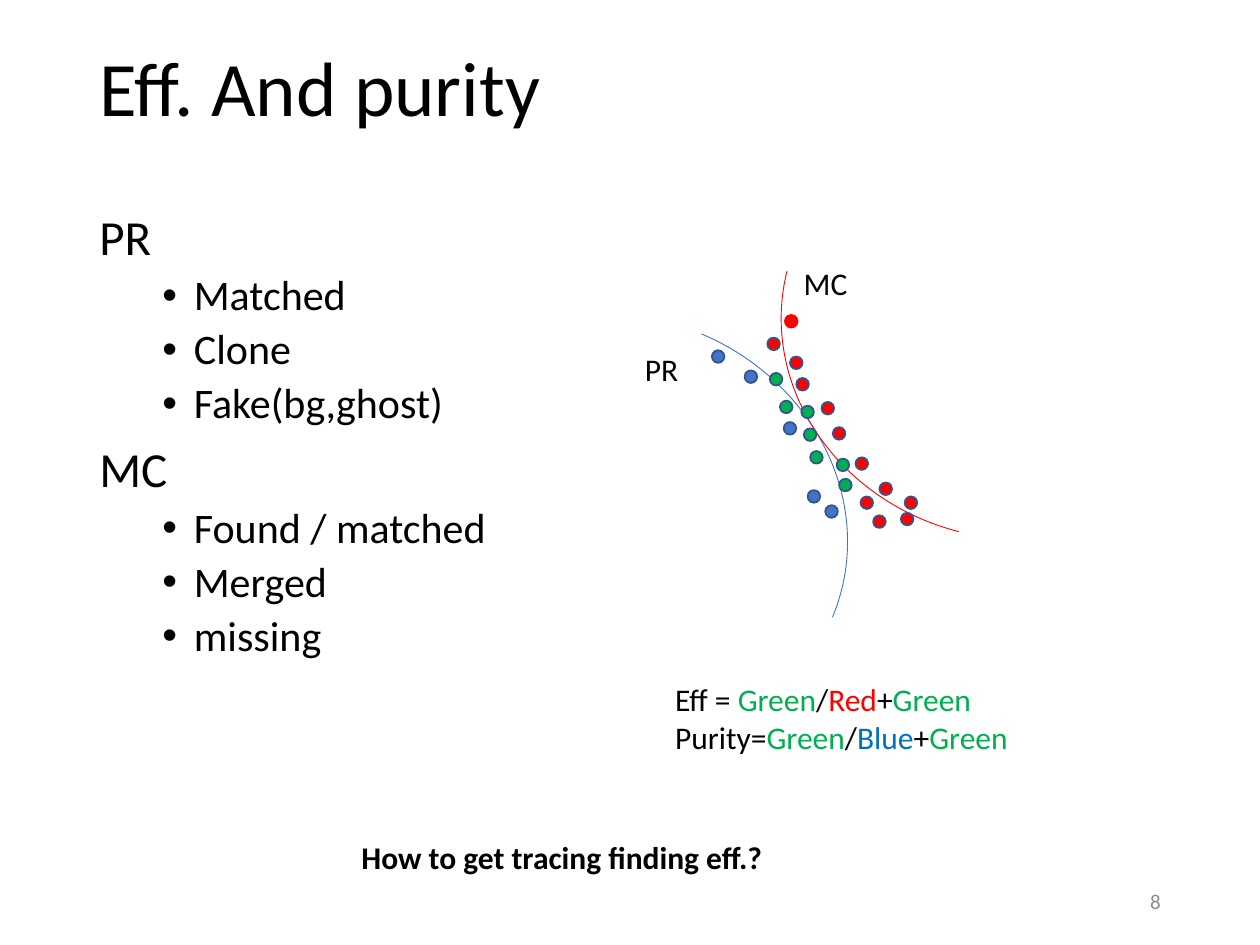
import pptx
import pptx.util
import pptx.dml.color
import pptx.enum.shapes
import pptx.enum.text
import lxml.etree
from pptx.util import Inches

COLORS = {
    "black": "000000", "gray": "8C8C8C", "red": "FF0000", "green": "00B050",
    "blue": "4472C4", "blue text": "0070C0", "outline": "325491",
}
ALIGN = pptx.enum.text.PP_ALIGN
ANCHOR = pptx.enum.text.MSO_ANCHOR
AUTO_SIZE = pptx.enum.text.MSO_AUTO_SIZE
SHAPE = pptx.enum.shapes.MSO_SHAPE


def rgb(name):
    return pptx.dml.color.RGBColor.from_string(COLORS[name])


def write(frame, runs, size=18, color="black", bold=False, align=ALIGN.LEFT,
          spacing=None, before=None, bullet=False, add=False):
    """Write one paragraph; runs is a string or a list of (text, color)."""
    paragraph = frame.add_paragraph() if add else frame.paragraphs[0]
    paragraph.alignment = align
    if spacing:
        paragraph.line_spacing = spacing
    if before is not None:
        paragraph.space_before = pptx.util.Pt(before)
    if bullet:
        paragraph.level = 1
        properties = paragraph._p.get_or_add_pPr()
        properties.set("marL", str(Inches(0.75)))
        properties.set("indent", str(Inches(-0.25)))
        namespace = pptx.oxml.ns.nsuri("a")
        font = lxml.etree.SubElement(properties, f"{{{namespace}}}buFont")
        font.set("typeface", "Arial")
        mark = lxml.etree.SubElement(properties, f"{{{namespace}}}buChar")
        mark.set("char", "•")
    for text, run_color in [(runs, color)] if isinstance(runs, str) else runs:
        run = paragraph.add_run()
        run.text = text
        run.font.name = "Calibri"
        run.font.size = pptx.util.Pt(size)
        run.font.bold = bold
        run.font.color.rgb = rgb(run_color)


deck = pptx.Presentation()
deck.slide_width, deck.slide_height = Inches(10), Inches(7.5)
slide = deck.slides.add_slide(deck.slide_layouts[5])
shapes = slide.shapes

# Title
title = shapes.title
title.left, title.top = Inches(0.69), Inches(0)
title.width, title.height = Inches(8.62), Inches(1.45)
title.text_frame.vertical_anchor = ANCHOR.MIDDLE
title.text_frame.auto_size = AUTO_SIZE.NONE
write(title.text_frame, "Eff. And purity", size=44, spacing=0.9)

# Track categories
categories = shapes.add_textbox(Inches(0.69), Inches(1.64), Inches(8.62), Inches(5.12)).text_frame
categories.word_wrap = True
groups = {
    "PR": ["Matched", "Clone", "Fake(bg,ghost)"],
    "MC": ["Found / matched", "Merged", "missing"],
}
for number, (heading, items) in enumerate(groups.items()):
    write(categories, heading, size=28, spacing=0.9, before=10, add=number > 0)
    for item in items:
        write(categories, item, size=24, spacing=0.9, before=5, bullet=True, add=True)

# Tracks
for left, top, rotation, color in [(3.09, 2.52, 22.8, "blue"), (6.19, 0.93, 194.2, "red")]:
    track = shapes.add_shape(SHAPE.ARC, Inches(left), Inches(top), Inches(3.66), Inches(3.34))
    track.rotation = rotation
    track.shadow.inherit = False
    track.fill.background()
    track.line.color.rgb = rgb(color)
    track.line.width = pptx.util.Pt(0.5)

# Hits: the first red one, on the MC track, has a red outline
hits = {
    "red": [(6.23, 2.5), (6.27, 2.83), (6.32, 3), (6.09, 2.68), (6.52, 3.19),
            (6.61, 3.39), (6.79, 3.63), (6.98, 3.83), (6.83, 3.94),
            (6.93, 4.09), (7.18, 3.94), (7.15, 4.07)],
    "blue": [(5.65, 2.78), (5.91, 2.94), (6.22, 3.35), (6.41, 3.89), (6.55, 4.01)],
    "green": [(6.11, 2.96), (6.36, 3.22), (6.19, 3.18), (6.38, 3.4),
              (6.43, 3.58), (6.64, 3.64), (6.66, 3.8)],
}
for color, positions in hits.items():
    for left, top in positions:
        hit = shapes.add_shape(SHAPE.OVAL, Inches(left), Inches(top), Inches(0.1), Inches(0.1))
        hit.shadow.inherit = False
        hit.fill.solid()
        hit.fill.fore_color.rgb = rgb(color)
        hit.line.color.rgb = rgb("red" if (left, top) == hits["red"][0] else "outline")
        hit.line.width = pptx.util.Pt(1)

# Track labels, formulas and closing question
efficiency = [("Eff = ", "black"), ("Green", "green"), ("/", "black"),
              ("Red", "red"), ("+", "black"), ("Green", "green")]
purity = [("Purity=", "black"), ("Green", "green"), ("/", "black"),
          ("Blue", "blue text"), ("+", "black"), ("Green", "green")]
notes = [
    (6.28, 2.05, 0.55, 0.4, ["MC"], False),
    (5.02, 2.73, 0.47, 0.4, ["PR"], False),
    (5.26, 5.35, 2.87, 0.71, [efficiency, purity], False),
    (2.77, 6.6, 3.45, 0.4, ["How to get tracing finding eff.?"], True),
]
for left, top, width, height, lines, bold in notes:
    note = shapes.add_textbox(Inches(left), Inches(top), Inches(width), Inches(height)).text_frame
    note.word_wrap = False
    note.auto_size = AUTO_SIZE.SHAPE_TO_FIT_TEXT
    for number, line in enumerate(lines):
        write(note, line, bold=bold, add=number > 0)

# Page number
page = shapes.add_textbox(Inches(7.06), Inches(6.95), Inches(2.25), Inches(0.4)).text_frame
page.word_wrap = True
page.vertical_anchor = ANCHOR.MIDDLE
write(page, "8", size=12, color="gray", align=ALIGN.RIGHT)

deck.save("out.pptx")
